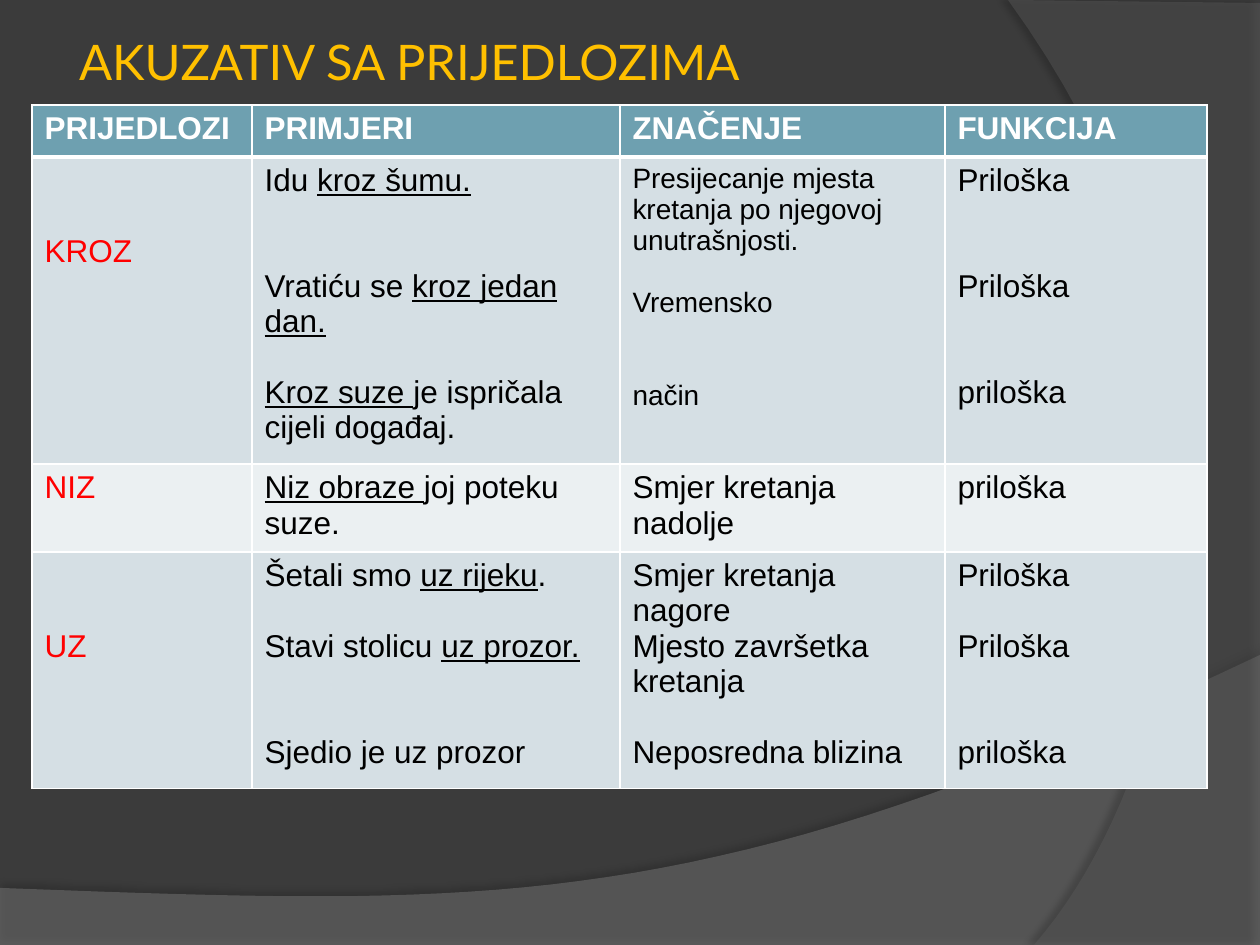
from lxml import etree
from pptx import Presentation
from pptx.dml.color import RGBColor
from pptx.enum.text import MSO_ANCHOR
from pptx.oxml import parse_xml
from pptx.oxml.ns import nsdecls
from pptx.util import Pt

EMU = 914400 / 126
DARK = RGBColor(0x3B, 0x3B, 0x3B)
WAVE = RGBColor(0x7F, 0x7F, 0x7F)
SIDE = RGBColor(0x5E, 0x5E, 0x5E)
GOLD = RGBColor(0xFF, 0xC0, 0x00)
TEAL = RGBColor(0x6E, 0xA0, 0xB0)
MIST = RGBColor(0xD5, 0xDF, 0xE4)
PALE = RGBColor(0xEB, 0xF0, 0xF2)
WHITE = RGBColor(0xFF, 0xFF, 0xFF)
BLACK = RGBColor(0, 0, 0)
RED = RGBColor(0xFF, 0, 0)

TITLE = "AKUZATIV SA PRIJEDLOZIMA"
HEADS = ["PRIJEDLOZI", "PRIMJERI", "ZNAČENJE", "FUNKCIJA"]
# Each paragraph: empty lines above it, text with _underlined_ parts
ROWS = [
    [
        [(2, "KROZ")],
        [(0, "Idu _kroz šumu._"), (2, "Vratiću se _kroz jedan dan._"),
         (1, "_Kroz suze _je ispričala cijeli događaj.")],
        [(0, "Presijecanje mjesta kretanja po njegovoj unutrašnjosti."),
         (1, "Vremensko"), (2, "način")],
        [(0, "Priloška"), (2, "Priloška"), (2, "priloška")],
    ],
    [
        [(0, "NIZ")],
        [(0, "_Niz obraze _joj poteku suze.")],
        [(0, "Smjer kretanja nadolje")],
        [(0, "priloška")],
    ],
    [
        [(2, "UZ")],
        [(0, "Šetali smo _uz rijeku_."), (1, "Stavi stolicu _uz prozor._"),
         (2, "Sjedio je uz prozor")],
        [(0, "Smjer kretanja nagore"), (0, "Mjesto završetka kretanja"),
         (1, "Neposredna blizina")],
        [(0, "Priloška"), (1, "Priloška"), (2, "priloška")],
    ],
]
SMALL = (1, 2)
COLS = [220, 368, 325, 262]
HIGHS = [52, 294, 83, 224]
LINES = {18: 35.3, 16: 31}


def px(num):
    return round(num * EMU)


def curve(start, one, two, end, steps=40):
    out = []
    for step in range(steps + 1):
        t = step / steps
        u = 1 - t
        out.append(tuple(
            u**3 * a + 3 * u * u * t * b + 3 * u * t * t * c + t**3 * d
            for a, b, c, d in zip(start, one, two, end)))
    return out


def swoosh(slide, points, color, alpha, shade, dist, angle):
    first, *rest = [(round(x * 10), round(y * 10)) for x, y in points]
    pen = slide.shapes.build_freeform(*first, scale=EMU / 10)
    pen.add_line_segments(rest, close=True)
    shape = pen.convert_to_shape()
    shape.fill.solid()
    shape.fill.fore_color.rgb = color
    shape.line.fill.background()
    props = shape.element.spPr
    tint = props.find(".//{*}solidFill/{*}srgbClr")
    etree.SubElement(tint, tint.tag.replace("srgbClr", "alpha"), val=str(alpha * 1000))
    props.append(parse_xml(
        f'<a:effectLst {nsdecls("a")}><a:outerShdw blurRad="{Pt(4)}" dist="{Pt(dist)}" '
        f'dir="{angle * 60000}" algn="ctr" rotWithShape="0"><a:srgbClr val="000000">'
        f'<a:alpha val="{shade * 1000}"/></a:srgbClr></a:outerShdw></a:effectLst>'))


def style(run, size, color, face="Arial", bold=False):
    run.font.size = Pt(size)
    run.font.name = face
    run.font.bold = bold
    run.font.color.rgb = color


def edge(cell, top, base):
    props = cell._tc.get_or_add_tcPr()
    for side, width in zip("LRTB", (1, 1, top, base)):
        props.append(parse_xml(
            f'<a:ln{side} {nsdecls("a")} w="{Pt(width)}"><a:solidFill>'
            f'<a:srgbClr val="{WHITE}"/></a:solidFill></a:ln{side}>'))


def write(cell, paras, size, color, bold):
    frame = cell.text_frame
    for num, (gap, text) in enumerate(paras):
        para = frame.add_paragraph() if num else frame.paragraphs[0]
        space = gap * LINES[size]
        if num:
            para.space_before = px(space)
        else:
            cell.margin_top = px(6 + space)
        for spot, part in enumerate(text.split("_")):
            if part:
                run = para.add_run()
                run.text = part
                style(run, size, color, bold=bold)
                run.font.underline = spot % 2 == 1


def main():
    deck = Presentation()
    deck.slide_width, deck.slide_height = px(1260), px(945)
    slide = deck.slides.add_slide(deck.slide_layouts[6])
    slide.background.fill.solid()
    slide.background.fill.fore_color.rgb = DARK

    low = curve((1260, 655), (704, 919), (493, 906), (0, 888))
    swoosh(slide, [(0, 945), (1260, 945)] + low, WAVE, 45, 35, 3.5, 270)
    bend = curve((1034, 945), (1178, 780), (1283, 378), (1008, 0))
    swoosh(slide, [(1260, 3), (1260, 945)] + bend, SIDE, 40, 45, 4, 180)

    box = slide.shapes.add_textbox(px(73), 0, px(1029), px(122))
    frame = box.text_frame
    frame.word_wrap = True
    frame.vertical_anchor = MSO_ANCHOR.MIDDLE
    frame.margin_left = frame.margin_right = px(6)
    frame.margin_top = frame.margin_bottom = px(6)
    run = frame.paragraphs[0].add_run()
    run.text = TITLE
    style(run, 28, GOLD, "Lato")

    grid = [[[(0, head)] for head in HEADS]] + ROWS
    table = slide.shapes.add_table(len(grid), len(COLS), px(32), px(105),
                                   px(sum(COLS)), px(sum(HIGHS))).table
    for col, wide in zip(table.columns, COLS):
        col.width = px(wide)
    for r, (row, high) in enumerate(zip(grid, HIGHS)):
        table.rows[r].height = px(high)
        for c, paras in enumerate(row):
            cell = table.cell(r, c)
            edge(cell, 3 if r == 1 else 1, 3 if r == 0 else 1)
            cell.fill.solid()
            cell.fill.fore_color.rgb = (TEAL, MIST, PALE, MIST)[r]
            color = WHITE if r == 0 else RED if c == 0 else BLACK
            write(cell, paras, 16 if (r, c) == SMALL else 18, color, r == 0)
    deck.save("out.pptx")


if __name__ == "__main__":
    main()
